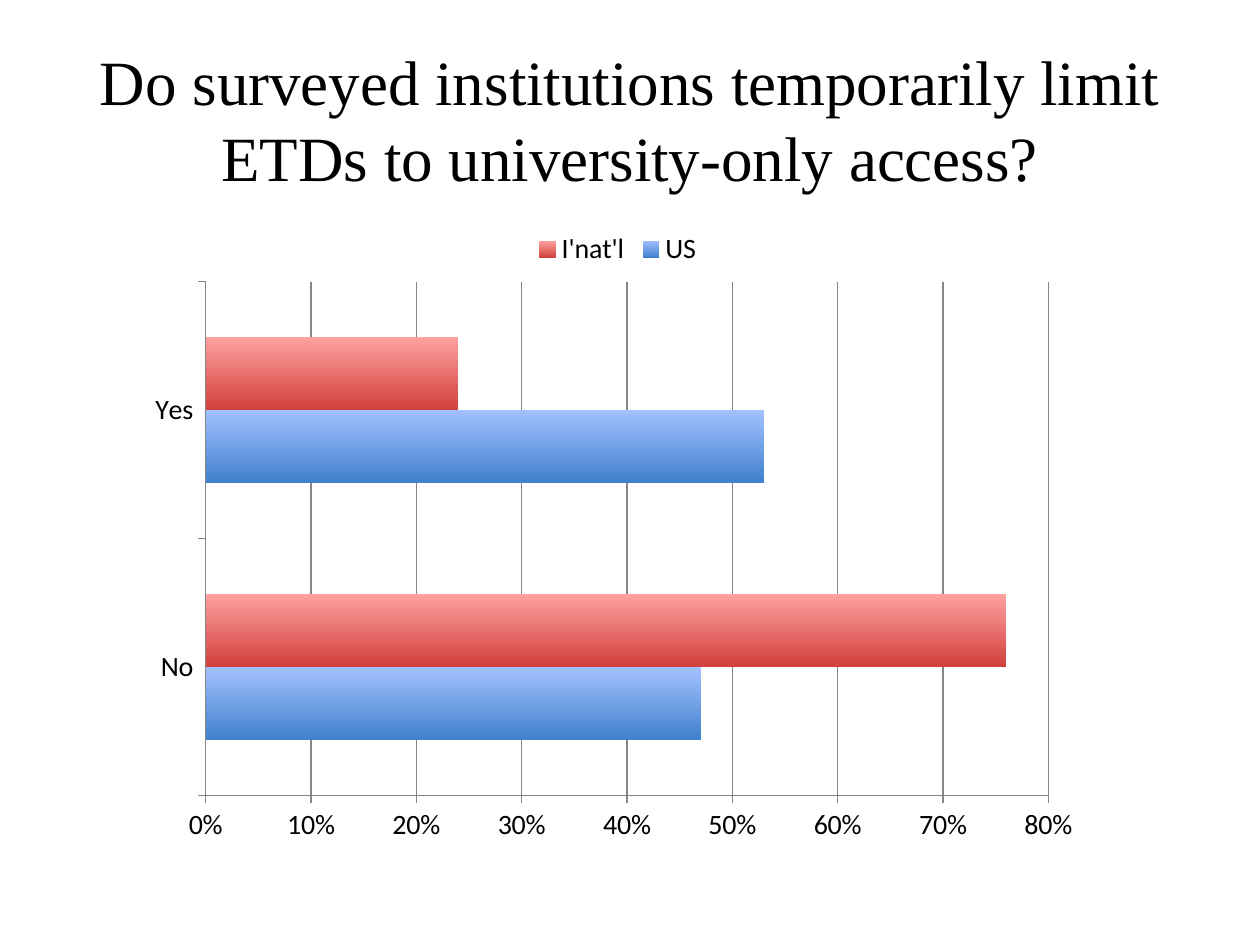
import dataclasses

import lxml.etree
import pptx
import pptx.chart.data
import pptx.dml.color
import pptx.enum.chart
import pptx.enum.text
import pptx.oxml
import pptx.oxml.ns
import pptx.util

WIDTH, HEIGHT = pptx.util.Inches(10), pptx.util.Inches(7.5)
COLORS = {
    "text": "000000",
    "grid": "868686",
    "us_light": "A3C1FF",
    "us_dark": "3F80CD",
    "intl_light": "FFA2A1",
    "intl_dark": "D1403C",
}


@dataclasses.dataclass
class Box:
    """Position and size as shares of the slide."""
    x: float
    y: float
    w: float
    h: float

    def emu(self) -> tuple:
        return (int(self.x * WIDTH), int(self.y * HEIGHT),
                int(self.w * WIDTH), int(self.h * HEIGHT))


@dataclasses.dataclass
class Series:
    name: str
    values: tuple
    color: str


CATEGORIES = ("No", "Yes")
SERIES = (
    Series("US", (0.47, 0.53), "us"),
    Series("I'nat'l", (0.76, 0.24), "intl"),
)


def rgb(name: str) -> pptx.dml.color.RGBColor:
    return pptx.dml.color.RGBColor.from_string(COLORS[name])


def add_title(slide, box: Box, text: str) -> None:
    tf = slide.shapes.add_textbox(*box.emu()).text_frame
    tf.word_wrap = True
    tf.vertical_anchor = pptx.enum.text.MSO_ANCHOR.MIDDLE
    tf.text = text
    p = tf.paragraphs[0]
    p.alignment = pptx.enum.text.PP_ALIGN.CENTER
    font = p.runs[0].font
    font.name, font.size = "Times New Roman", pptx.util.Pt(36)
    font.color.rgb = rgb("text")


def style_line(line) -> None:
    line.color.rgb = rgb("grid")
    line.width = pptx.util.Pt(0.75)


def set_plot_layout(chart, **shares: float) -> None:
    """Fix the inner plot area, given as shares of the chart."""
    qn = pptx.oxml.ns.qn
    area = chart.plots[0]._element.getparent()
    for old in area.findall(qn("c:layout")):
        area.remove(old)
    layout = lxml.etree.Element(qn("c:layout"))
    manual = lxml.etree.SubElement(layout, qn("c:manualLayout"))
    settings = {"layoutTarget": "inner", "xMode": "edge", "yMode": "edge", **shares}
    for tag, value in settings.items():
        lxml.etree.SubElement(manual, qn(f"c:{tag}")).set("val", str(value))
    area.insert(0, layout)


def add_bar_chart(slide, box: Box) -> None:
    data = pptx.chart.data.CategoryChartData(number_format="0%")
    data.categories = CATEGORIES
    for s in SERIES:
        data.add_series(s.name, s.values)
    chart = slide.shapes.add_chart(
        pptx.enum.chart.XL_CHART_TYPE.BAR_CLUSTERED, *box.emu(), data).chart
    chart.has_title = False
    chart.font.name, chart.font.size = "Calibri", pptx.util.Pt(16)
    chart.font.color.rgb = rgb("text")

    # Legend
    chart.has_legend = True
    chart.legend.position = pptx.enum.chart.XL_LEGEND_POSITION.TOP
    chart.legend.include_in_layout = False

    # Axes
    for axis in (chart.category_axis, chart.value_axis):
        axis.major_tick_mark = pptx.enum.chart.XL_TICK_MARK.OUTSIDE
        axis.minor_tick_mark = pptx.enum.chart.XL_TICK_MARK.NONE
        style_line(axis.format.line)
    axis = chart.value_axis
    axis.minimum_scale, axis.maximum_scale, axis.major_unit = 0, 0.8, 0.1
    axis.tick_labels.number_format = "0%"
    axis.tick_labels.number_format_is_linked = False
    axis.has_major_gridlines = True
    style_line(axis.major_gridlines.format.line)

    # Bars, shaded from light at the top to dark at the bottom
    plot = chart.plots[0]
    plot.gap_width, plot.overlap, plot.vary_by_categories = 150, 0, False
    for bars, s in zip(plot.series, SERIES):
        fill = bars.format.fill
        fill.gradient()
        fill.gradient_angle = 270
        for stop, shade in zip(fill.gradient_stops, ("light", "dark")):
            stop.color.rgb = rgb(f"{s.color}_{shade}")
    set_plot_layout(chart, x=0.07, y=0.1, w=0.88, h=0.8)


def main() -> None:
    prs = pptx.Presentation()
    prs.slide_width, prs.slide_height = WIDTH, HEIGHT
    slide = prs.slides.add_slide(prs.slide_layouts[6])
    add_title(slide, Box(0.05, 0.04, 0.9, 0.17),
              "Do surveyed institutions temporarily limit ETDs to university-only access?")
    add_bar_chart(slide, Box(0.11, 0.23, 0.76, 0.68))
    prs.save("out.pptx")


if __name__ == "__main__":
    main()
